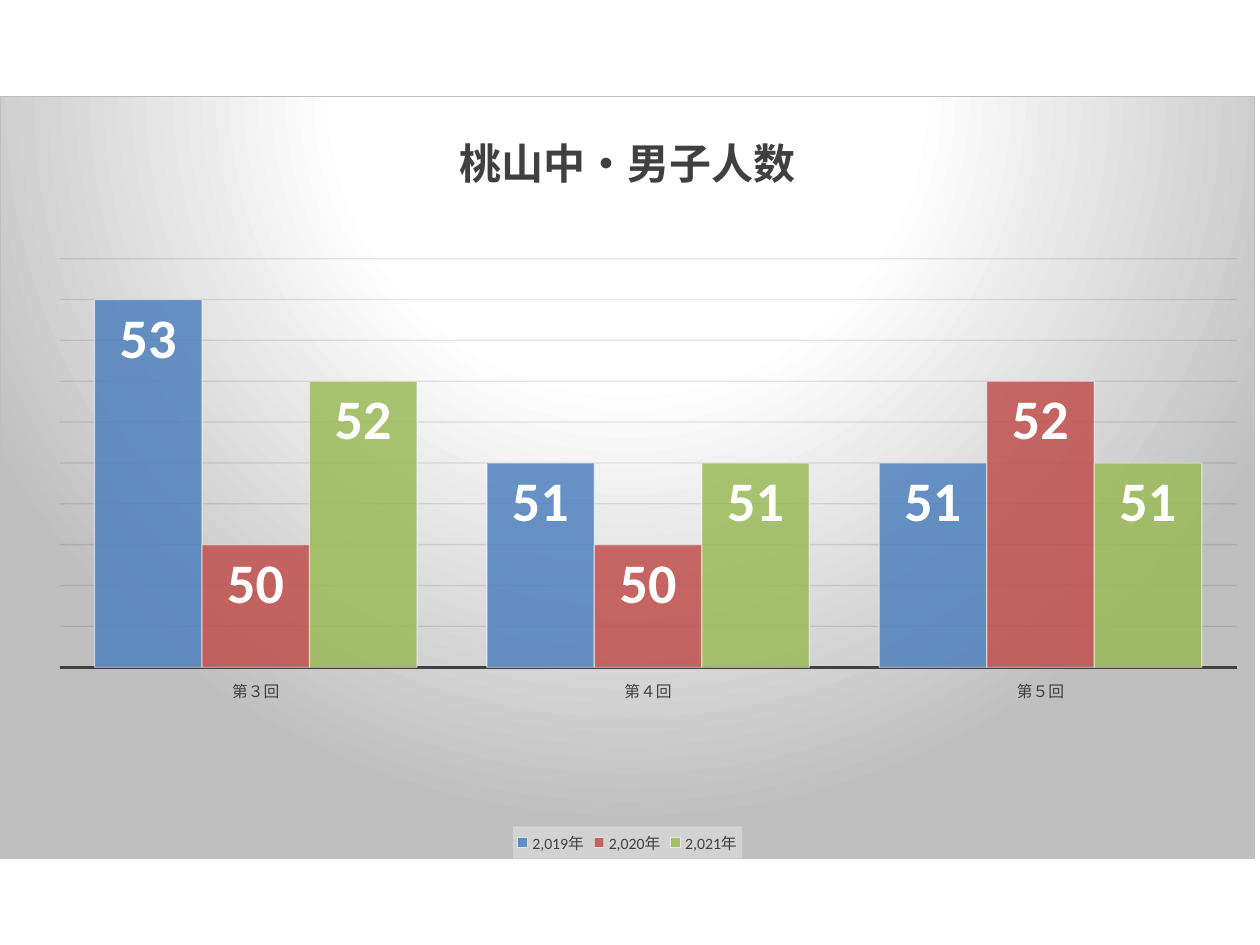
from lxml import etree
from pptx import Presentation
from pptx.chart.data import CategoryChartData
from pptx.dml.color import RGBColor
from pptx.enum.chart import (XL_CHART_TYPE, XL_LABEL_POSITION,
                             XL_LEGEND_POSITION, XL_TICK_LABEL_POSITION, XL_TICK_MARK)
from pptx.oxml import parse_xml
from pptx.oxml.ns import nsdecls, qn
from pptx.util import Inches, Pt

FONT = "Calibri"
COLORS = {"text": "404040", "grid": "0D0D0D", "white": "FFFFFF", "edge": "BFBFBF",
          "legend": "F2F2F2", "blue": "4F81BD", "red": "C0504D", "green": "9BBB59"}
ROUNDS = ["第３回", "第４回", "第５回"]
YEARS = [("2,019年", (53, 51, 51), "blue"),
         ("2,020年", (50, 50, 52), "red"),
         ("2,021年", (52, 51, 51), "green")]


def rgb(name):
    return RGBColor.from_string(COLORS[name])


def set_font(font, size, color="text", bold=False):
    font.name, font.size, font.bold = FONT, Pt(size), bold
    font.color.rgb = rgb(color)


def set_line(line, color, width):
    line.color.rgb = rgb(color)
    line.width = Pt(width)


def set_alpha(element, where, percent):
    for clr in element.xpath(f"{where}/a:solidFill/a:srgbClr"):
        etree.SubElement(clr, qn("a:alpha")).set("val", str(percent * 1000))


def fill_chart_area(chart):
    """Circular white-to-grey gradient with a thin border."""
    stops = "".join(
        f'<a:gs pos="{pos * 1000}"><a:srgbClr val="{COLORS[c]}"/></a:gs>'
        for pos, c in ((0, "white"), (39, "white"), (100, "edge")))
    chart.element.find(qn("c:txPr")).addprevious(parse_xml(
        f'<c:spPr {nsdecls("c", "a")}><a:gradFill><a:gsLst>{stops}</a:gsLst>'
        '<a:path path="circle"><a:fillToRect l="50000" t="-80000" r="50000" b="180000"/>'
        '</a:path></a:gradFill><a:ln w="9525"><a:solidFill>'
        f'<a:srgbClr val="{COLORS["edge"]}"/></a:solidFill></a:ln></c:spPr>'))


def place_plot(chart, x, y, w, h):
    plot_area = chart.element.find(".//" + qn("c:plotArea"))
    old = plot_area.find(qn("c:layout"))
    if old is not None:
        plot_area.remove(old)
    plot_area.insert(0, parse_xml(
        f'<c:layout {nsdecls("c")}><c:manualLayout><c:layoutTarget val="inner"/>'
        '<c:xMode val="edge"/><c:yMode val="edge"/>'
        f'<c:x val="{x}"/><c:y val="{y}"/><c:w val="{w}"/><c:h val="{h}"/>'
        '</c:manualLayout></c:layout>'))


def style_axes(chart):
    cat = chart.category_axis
    cat.major_tick_mark = cat.minor_tick_mark = XL_TICK_MARK.NONE
    cat.tick_label_position = XL_TICK_LABEL_POSITION.LOW
    set_font(cat.tick_labels.font, 9)
    set_line(cat.format.line, "text", 1.5)

    val = chart.value_axis
    val.visible = False
    val.minimum_scale, val.maximum_scale, val.major_unit = 48.5, 53.5, 0.5
    val.has_major_gridlines = True
    set_line(val.major_gridlines.format.line, "grid", 0.75)
    set_alpha(chart.element, ".//c:majorGridlines/c:spPr/a:ln", 10)


def style_series(series, color):
    series.invert_if_negative = False
    series.format.fill.solid()
    series.format.fill.fore_color.rgb = rgb(color)
    set_line(series.format.line, "white", 0.75)
    set_alpha(series._element, "c:spPr", 85)
    set_alpha(series._element, "c:spPr/a:ln", 50)

    labels = series.data_labels
    labels.show_value = True
    labels.position = XL_LABEL_POSITION.INSIDE_END
    set_font(labels.font, 32, "white", True)


def add_legend(chart):
    chart.has_legend = True
    legend = chart.legend
    legend.position = XL_LEGEND_POSITION.BOTTOM
    legend.include_in_layout = False
    set_font(legend.font, 9)
    legend._element.find(qn("c:txPr")).addprevious(parse_xml(
        f'<c:spPr {nsdecls("c", "a")}><a:solidFill><a:srgbClr val="{COLORS["legend"]}">'
        '<a:alpha val="39000"/></a:srgbClr></a:solidFill></c:spPr>'))


def add_headcount_chart(slide, x, y, w, h):
    data = CategoryChartData()
    data.categories = ROUNDS
    for name, values, _ in YEARS:
        data.add_series(name, values)
    chart = slide.shapes.add_chart(XL_CHART_TYPE.COLUMN_CLUSTERED, x, y, w, h, data).chart
    chart.font.name, chart.font.size = FONT, Pt(10)
    fill_chart_area(chart)

    # Title
    chart.has_title = True
    tf = chart.chart_title.text_frame
    tf.text = "桃山中・男子人数"
    set_font(tf.paragraphs[0].font, 24, bold=True)
    chart.chart_title.include_in_layout = False

    # Columns and axes
    plot = chart.plots[0]
    plot.gap_width, plot.overlap = 65, 0
    plot.vary_by_categories = False
    for series, (_, _, color) in zip(plot.series, YEARS):
        style_series(series, color)
    style_axes(chart)
    place_plot(chart, 0.047, 0.213, 0.939, 0.536)
    add_legend(chart)


def main():
    prs = Presentation()
    prs.slide_width, prs.slide_height = Inches(10), Inches(7.5)
    s = prs.slides.add_slide(prs.slide_layouts[6])
    add_headcount_chart(s, Inches(0), Inches(0.76), Inches(9.96), Inches(6.06))
    prs.save("out.pptx")


if __name__ == "__main__":
    main()
